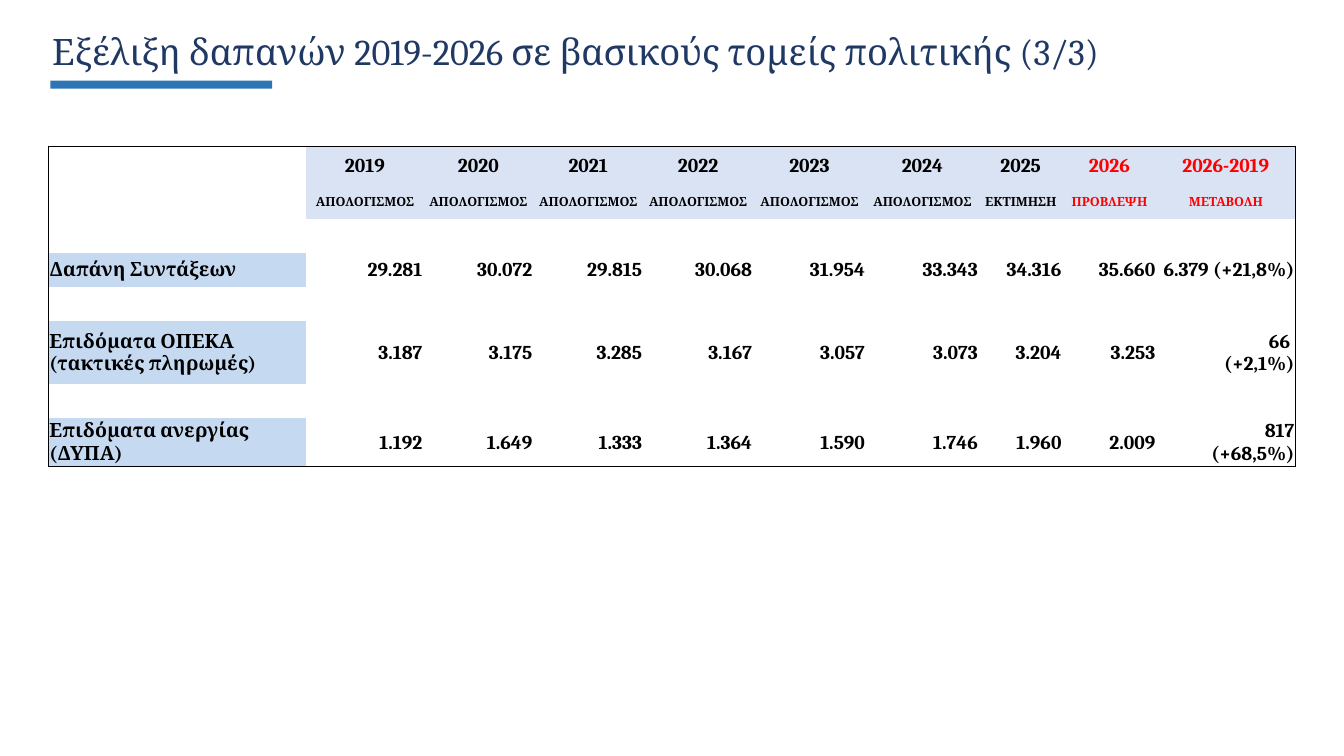
from dataclasses import dataclass

from lxml import etree
from pptx import Presentation
from pptx.dml.color import RGBColor
from pptx.enum.shapes import MSO_SHAPE
from pptx.enum.text import MSO_ANCHOR, MSO_AUTO_SIZE, PP_ALIGN
from pptx.oxml.ns import qn
from pptx.slide import Slide
from pptx.table import Table, _Cell
from pptx.text.text import _Paragraph
from pptx.util import Inches, Pt

RECTANGLE = MSO_SHAPE.RECTANGLE
MIDDLE = MSO_ANCHOR.MIDDLE
GROW = MSO_AUTO_SIZE.SHAPE_TO_FIT_TEXT
LEFT, CENTER, RIGHT = PP_ALIGN.LEFT, PP_ALIGN.CENTER, PP_ALIGN.RIGHT


@dataclass(frozen=True)
class Theme:
    font: str = "Cambria"
    title: str = "203864"
    accent: str = "2E75B6"
    text: str = "000000"
    highlight: str = "FF0000"
    header_fill: str = "DAE3F3"
    label_fill: str = "C5D9F1"
    border: str = "000000"
    border_width: float = 0.5
    title_size: int = 26
    body_size: int = 14
    status_size: int = 9


@dataclass(frozen=True)
class Period:
    name: str
    status: str
    width: float
    color: str


@dataclass(frozen=True)
class Expense:
    label: str
    amounts: tuple[str, ...]
    change: tuple[str, ...]
    row: int


THEME = Theme()
TITLE = "Εξέλιξη δαπανών 2019-2026 σε βασικούς τομείς πολιτικής (3/3)"
LABEL_WIDTH = 2.56
ROW_HEIGHTS = (0.38, 0.34, 0.34, 0.34, 0.34, 0.62, 0.34, 0.48)
ACTUAL_WIDTHS = (1.16, 1.09, 1.09, 1.09, 1.12, 1.12)
PERIODS = [
    Period(str(year), "ΑΠΟΛΟΓΙΣΜΟΣ", width, THEME.text)
    for year, width in enumerate(ACTUAL_WIDTHS, 2019)
] + [
    Period("2025", "ΕΚΤΙΜΗΣΗ", 0.83, THEME.text),
    Period("2026", "ΠΡΟΒΛΕΨΗ", 0.93, THEME.highlight),
    Period("2026-2019", "ΜΕΤΑΒΟΛΗ", 1.38, THEME.highlight),
]
EXPENSES = [
    Expense(
        "Δαπάνη Συντάξεων",
        ("29.281", "30.072", "29.815", "30.068", "31.954", "33.343", "34.316", "35.660"),
        ("6.379 (+21,8%)",),
        3,
    ),
    Expense(
        "Επιδόματα ΟΠΕΚΑ (τακτικές πληρωμές)",
        ("3.187", "3.175", "3.285", "3.167", "3.057", "3.073", "3.204", "3.253"),
        ("66 ", "(+2,1%)"),
        5,
    ),
    Expense(
        "Επιδόματα ανεργίας (ΔΥΠΑ)",
        ("1.192", "1.649", "1.333", "1.364", "1.590", "1.746", "1.960", "2.009"),
        ("817", "(+68,5%)"),
        7,
    ),
]


def add_run(paragraph: _Paragraph, text: str, size: int, color: str, bold: bool) -> None:
    """Append one styled run to a paragraph."""
    run = paragraph.add_run()
    run.text = text
    run.font.name = THEME.font
    run.font.size = Pt(size)
    run.font.bold = bold
    run.font.color.rgb = RGBColor.from_string(color)


def write_cell(
    cell: _Cell,
    lines: tuple[str, ...],
    align: PP_ALIGN,
    size: int = THEME.body_size,
    color: str = THEME.text,
    fill: str | None = None,
) -> None:
    """Write bold lines into a cell, with an optional fill."""
    cell.margin_left = cell.margin_right = cell.margin_top = Inches(0.01)
    frame = cell.text_frame
    for index, line in enumerate(lines):
        paragraph = frame.add_paragraph() if index else frame.paragraphs[0]
        paragraph.alignment = align
        add_run(paragraph, line, size, color, True)
    if fill:
        cell.fill.solid()
        cell.fill.fore_color.rgb = RGBColor.from_string(fill)


def set_borders(cell: _Cell, edges: dict[str, bool]) -> None:
    """Draw the chosen edges of a cell and clear the others."""
    properties = cell._tc.get_or_add_tcPr()
    for edge, drawn in edges.items():
        line = etree.SubElement(properties, qn(f"a:ln{edge}"), w=str(Pt(THEME.border_width)))
        if drawn:
            solid = etree.SubElement(line, qn("a:solidFill"))
            etree.SubElement(solid, qn("a:srgbClr"), val=THEME.border)
        else:
            etree.SubElement(line, qn("a:noFill"))


def clear_grid(table: Table) -> None:
    """Leave the table plain inside one outer border."""
    last_row, last_column = len(ROW_HEIGHTS) - 1, len(PERIODS)
    for row in range(last_row + 1):
        for column in range(last_column + 1):
            cell = table.cell(row, column)
            cell.vertical_anchor = MIDDLE
            cell.margin_left = cell.margin_right = 0
            cell.margin_top = cell.margin_bottom = 0
            set_borders(cell, {
                "L": column == 0,
                "R": column == last_column,
                "T": row == 0,
                "B": row == last_row,
            })
            cell.fill.background()


def add_heading(slide: Slide) -> None:
    """Add the slide title and its accent bar."""
    heading = slide.shapes.add_textbox(Inches(0.42), Inches(0.24), Inches(12.44), Inches(0.54))
    frame = heading.text_frame
    frame.word_wrap = True
    frame.auto_size = GROW
    add_run(frame.paragraphs[0], TITLE, THEME.title_size, THEME.title, False)
    accent = slide.shapes.add_shape(RECTANGLE, Inches(0.5), Inches(0.8), Inches(2.2), Inches(0.08))
    accent.shadow.inherit = False
    accent.fill.solid()
    accent.fill.fore_color.rgb = RGBColor.from_string(THEME.accent)
    accent.line.fill.background()


def add_expense_table(slide: Slide) -> None:
    """Add the table of expenses by period."""
    widths = [LABEL_WIDTH] + [period.width for period in PERIODS]
    table = slide.shapes.add_table(
        len(ROW_HEIGHTS), len(widths),
        Inches(0.48), Inches(1.45), Inches(sum(widths)), Inches(sum(ROW_HEIGHTS)),
    ).table
    table.first_row = table.horz_banding = False
    for column, width in zip(table.columns, widths):
        column.width = Inches(width)
    for row, height in zip(table.rows, ROW_HEIGHTS):
        row.height = Inches(height)
    clear_grid(table)
    for column, period in enumerate(PERIODS, 1):
        headers = ((period.name, THEME.body_size), (period.status, THEME.status_size))
        for row, (text, size) in enumerate(headers):
            write_cell(table.cell(row, column), (text,), CENTER, size, period.color, THEME.header_fill)
    for expense in EXPENSES:
        write_cell(table.cell(expense.row, 0), (expense.label,), LEFT, fill=THEME.label_fill)
        values = [(amount,) for amount in expense.amounts] + [expense.change]
        for column, lines in enumerate(values, 1):
            write_cell(table.cell(expense.row, column), lines, RIGHT)


def main() -> None:
    """Build and save the slide."""
    presentation = Presentation()
    presentation.slide_width = Inches(13.33)
    presentation.slide_height = Inches(7.5)
    slide = presentation.slides.add_slide(presentation.slide_layouts[6])
    add_heading(slide)
    add_expense_table(slide)
    presentation.save("out.pptx")


if __name__ == "__main__":
    main()
